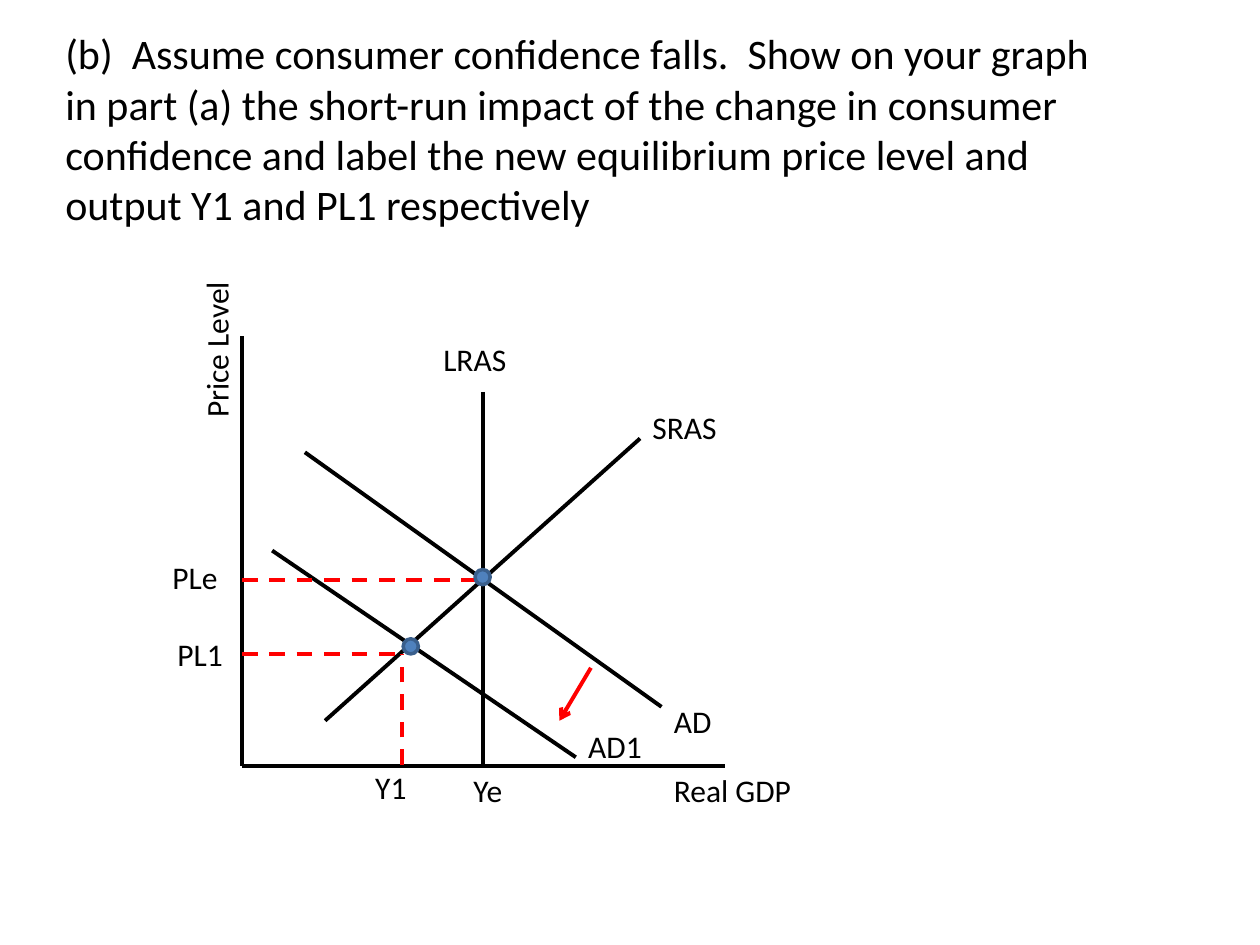
from pptx import Presentation
from pptx.dml.color import RGBColor
from pptx.enum.dml import MSO_LINE
from pptx.enum.shapes import MSO_CONNECTOR, MSO_SHAPE
from pptx.enum.text import MSO_AUTO_SIZE
from pptx.oxml.ns import qn
from pptx.util import Inches, Pt
from lxml import etree

STRAIGHT = MSO_CONNECTOR.STRAIGHT
OVAL = MSO_SHAPE.OVAL
DASH = MSO_LINE.DASH
FIT = MSO_AUTO_SIZE.SHAPE_TO_FIT_TEXT

COLORS = {"ink": "000000", "shift": "FF0000", "dot": "4F81BD", "rim": "3A5F8C"}

QUESTION = (
    "(b)  Assume consumer confidence falls.  Show on your graph in part (a) "
    "the short-run impact of the change in consumer confidence and label the "
    "new equilibrium price level and output Y1 and PL1 respectively"
)

ORIGIN_X, ORIGIN_Y = 1.92, 6.08
FULL_X, FULL_Y = 3.83, 4.6
NEW_X, NEW_Y = 3.19, 5.19
LABEL_W, LABEL_H = 1.33, 0.4
DOT = 0.12

CURVES = [
    (ORIGIN_X, 2.67, ORIGIN_X, ORIGIN_Y),
    (5.75, ORIGIN_Y, ORIGIN_X, ORIGIN_Y),
    (FULL_X, 3.11, FULL_X, ORIGIN_Y),
    (2.42, 3.59, 5.25, 5.61),
    (2.58, 5.72, 5.08, 3.48),
    (2.16, 4.37, 4.57, 6.01),
]

GUIDES = [
    (ORIGIN_X, FULL_Y, FULL_X, FULL_Y),
    (ORIGIN_X, NEW_Y, NEW_X, NEW_Y),
    (NEW_X, 6.07, NEW_X, NEW_Y),
]

LABELS = [
    ("Real GDP", 5.25, 6.07, 0),
    ("Price Level", 1.05, 2.55, 270),
    ("LRAS", 3.42, 2.65, 0),
    ("Ye", 3.66, 6.07, 0),
    ("PLe", 1.27, 4.38, 0),
    ("AD", 5.25, 5.52, 0),
    ("SRAS", 5.08, 3.19, 0),
    ("AD1", 4.57, 5.72, 0),
    ("Y1", 2.88, 6.05, 0),
    ("PL1", 1.31, 4.99, 0),
]

EQUILIBRIA = [(3.77, 4.52), (3.2, 5.07)]


def rgb(name):
    return RGBColor.from_string(COLORS[name])


class Builder:
    font = "Calibri"
    line_width = 2.25

    def __init__(self, slide):
        self.slide = slide

    def text(self, words, x, y, w, h, size=18, rotation=0):
        sp = self.slide.shapes.add_textbox(*map(Inches, (x, y, w, h)))
        sp.rotation = rotation
        tf = sp.text_frame
        tf.word_wrap = True
        tf.auto_size = FIT
        r = tf.paragraphs[0].add_run()
        r.text = words
        for key, value in {"name": self.font, "size": Pt(size)}.items():
            setattr(r.font, key, value)
        r.font.color.rgb = rgb("ink")

    def line(self, ends, color="ink", dash=None, arrow=False):
        sp = self.slide.shapes.add_connector(STRAIGHT, *map(Inches, ends))
        sp.line.color.rgb = rgb(color)
        for key, value in {"width": Pt(self.line_width), "dash_style": dash}.items():
            setattr(sp.line, key, value)
        if arrow:
            etree.SubElement(sp.line._get_or_add_ln(), qn("a:tailEnd"), type="arrow")
        etree.SubElement(sp._element.spPr, qn("a:effectLst"))

    def dot(self, x, y):
        sp = self.slide.shapes.add_shape(OVAL, *map(Inches, (x, y, DOT, DOT)))
        sp.shadow.inherit = False
        sp.fill.solid()
        sp.fill.fore_color.rgb = rgb("dot")
        sp.line.color.rgb = rgb("rim")
        sp.line.width = Pt(2)


def main():
    prs = Presentation()
    prs.slide_width, prs.slide_height = Inches(10), Inches(7.5)
    b = Builder(prs.slides.add_slide(prs.slide_layouts[6]))

    b.text(QUESTION, 0.42, 0.17, 8.33, 1.72, size=24)
    for ends in CURVES:
        b.line(ends)
    for ends in GUIDES:
        b.line(ends, "shift", DASH)
    b.line((4.69, 5.3, 4.44, 5.72), "shift", arrow=True)
    for words, x, y, rotation in LABELS:
        b.text(words, x, y, LABEL_W, LABEL_H, rotation=rotation)
    for x, y in EQUILIBRIA:
        b.dot(x, y)

    prs.save("out.pptx")


if __name__ == "__main__":
    main()
